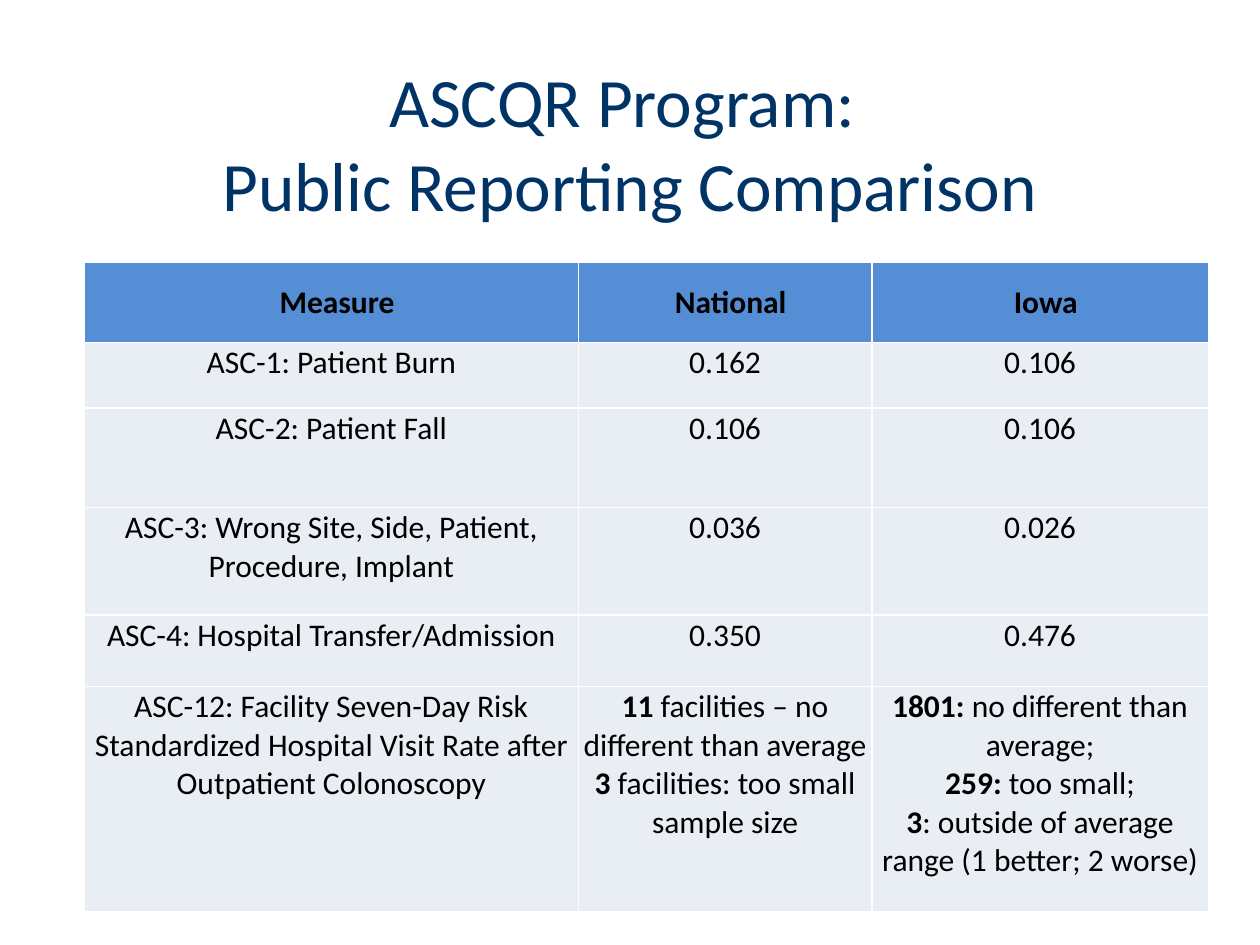
import pptx
import pptx.dml.color
import pptx.enum.text
import pptx.oxml
import pptx.oxml.ns
import pptx.util

TITLE = ("ASCQR Program: ", "Public Reporting Comparison")
HEAD = ("Measure", "National", "Iowa")
ROWS = (
    ("ASC-1: Patient Burn", "0.162", "0.106"),
    ("ASC-2: Patient Fall", "0.106", "0.106"),
    ("ASC-3: Wrong Site, Side, Patient, Procedure, Implant", "0.036", "0.026"),
    ("ASC-4: Hospital Transfer/Admission", "0.350", "0.476"),
    (
        "ASC-12: Facility Seven-Day Risk Standardized Hospital Visit Rate "
        "after Outpatient Colonoscopy",
        (
            ("11", " facilities – no different than average"),
            ("3", " facilities: too small sample size"),
        ),
        (
            ("1801: ", "no different than average;"),
            ("259: ", "too small;"),
            ("3", ": outside of average range (1 better; 2 worse)"),
        ),
    ),
)
WIDTHS = (3.92, 2.33, 2.67)
HEIGHTS = (0.64, 0.52, 0.79, 0.85, 0.57, 1.79)

THEME = {
    "font": "Calibri",
    "title": 39.6,
    "body": 18,
    "navy": "003366",
    "black": "000000",
    "blue": "558ED5",
    "pale": "E9EDF4",
    "rule": "FFFFFF",
}

Inches = pptx.util.Inches
Center = pptx.enum.text.PP_ALIGN.CENTER
Anchor = pptx.enum.text.MSO_ANCHOR


def color(key):
    return pptx.dml.color.RGBColor.from_string(THEME[key])


def apply(item, form):
    for key, value in form.items():
        setattr(item, key, value)


def style(font, size, ink, bold=False):
    apply(font, {"name": THEME["font"], "size": pptx.util.Pt(THEME[size]), "bold": bold})
    font.color.rgb = color(ink)


def add_run(para, text, size, ink, bold=False):
    run = para.add_run()
    run.text = text
    style(run.font, size, ink, bold)


def add_rules(cell):
    props = cell._tc.get_or_add_tcPr()
    for spot, side in enumerate("LRTB"):
        line = pptx.oxml.parse_xml(
            f'<a:ln{side} {pptx.oxml.ns.nsdecls("a")} w="12700"><a:solidFill>'
            f'<a:srgbClr val="{THEME["rule"]}"/></a:solidFill></a:ln{side}>'
        )
        props.insert(spot, line)


def fill_cell(cell, data, head):
    apply(cell, {
        "margin_left": Inches(0.1 if head else 0.01),
        "margin_right": Inches(0.01),
        "margin_top": Inches(0.01),
        "margin_bottom": 0,
        "vertical_anchor": Anchor.MIDDLE if head else Anchor.TOP,
    })
    cell.fill.solid()
    cell.fill.fore_color.rgb = color("blue" if head else "pale")
    add_rules(cell)
    if isinstance(data, str):
        data = ((data, ""),) if head else (("", data),)
    frame = cell.text_frame
    for spot, pair in enumerate(data):
        para = frame.add_paragraph() if spot else frame.paragraphs[0]
        para.alignment = Center
        for text, bold in zip(pair, (True, False)):
            if text:
                add_run(para, text, "body", "black", bold)


def add_title(slide):
    box = slide.shapes.add_textbox(*map(Inches, (0.5, 0.5, 9, 1.25)))
    frame = box.text_frame
    apply(frame, {"word_wrap": True, "vertical_anchor": Anchor.MIDDLE})
    para = frame.paragraphs[0]
    para.alignment = Center
    for spot, text in enumerate(TITLE):
        if spot:
            para.add_line_break()
        add_run(para, text, "title", "navy")


def add_grid(slide):
    size = (0.67, 2.08, sum(WIDTHS), sum(HEIGHTS))
    rows = (HEAD, *ROWS)
    grid = slide.shapes.add_table(len(rows), len(HEAD), *map(Inches, size)).table
    grid.horz_banding = False
    for col, width in zip(grid.columns, WIDTHS):
        col.width = Inches(width)
    for row, height in zip(grid.rows, HEIGHTS):
        row.height = Inches(height)
    for top, row in enumerate(rows):
        for left, data in enumerate(row):
            fill_cell(grid.cell(top, left), data, top == 0)


def main():
    deck = pptx.Presentation()
    apply(deck, {"slide_width": Inches(10), "slide_height": Inches(7.5)})
    slide = deck.slides.add_slide(deck.slide_layouts[6])
    add_title(slide)
    add_grid(slide)
    deck.save("out.pptx")


if __name__ == "__main__":
    main()
